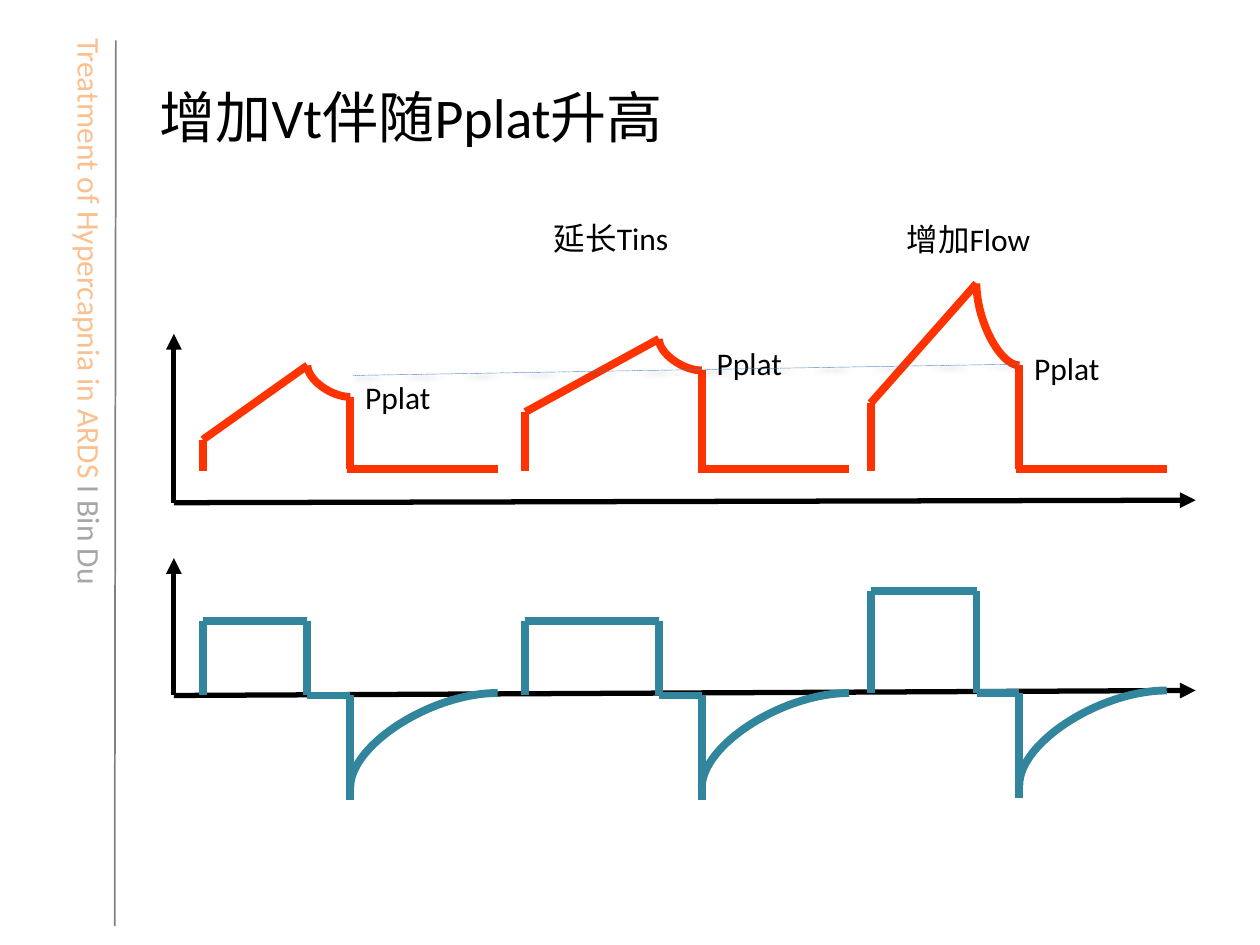
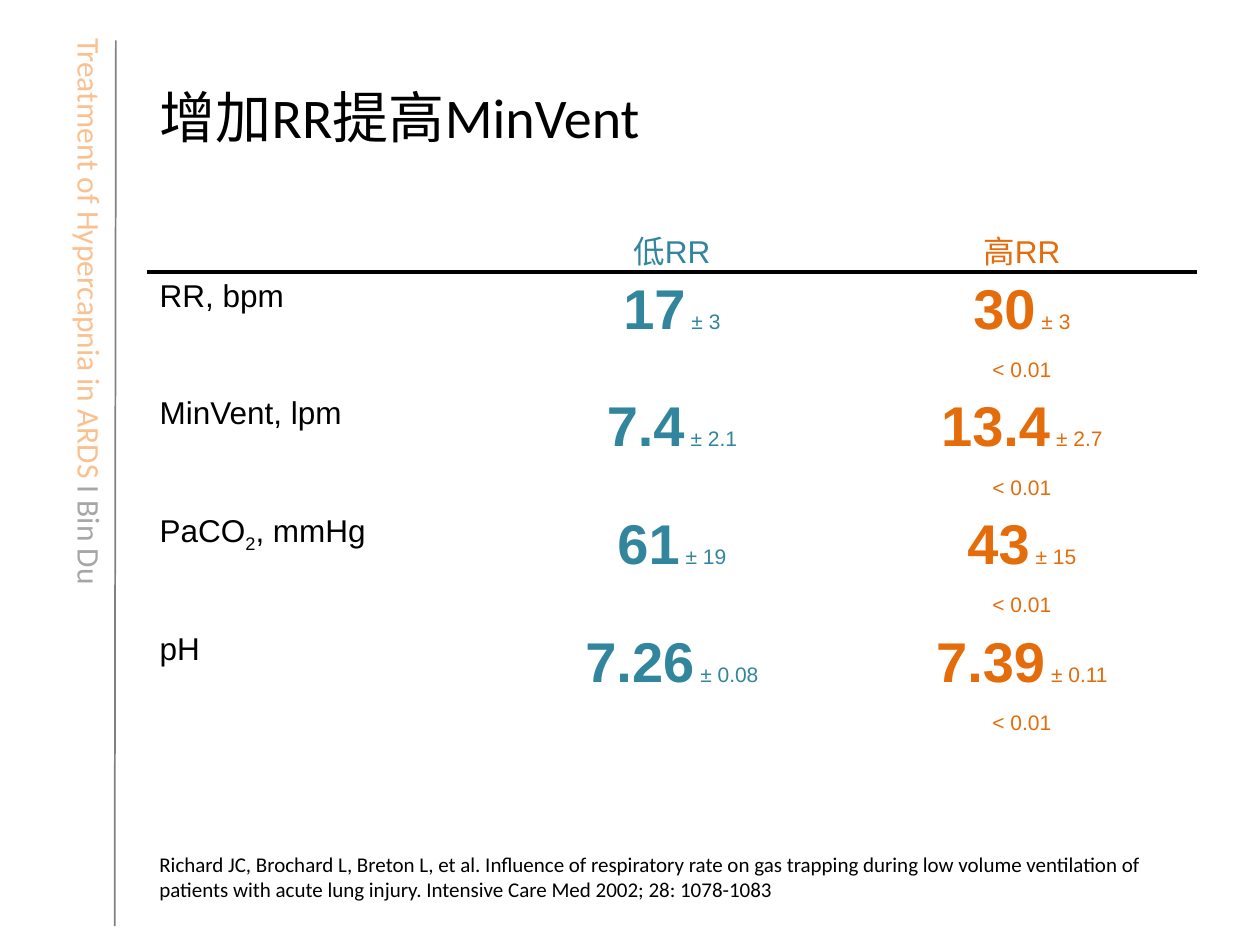
from lxml.etree import SubElement
from pptx import Presentation
from pptx.dml.color import RGBColor
from pptx.enum.dml import MSO_LINE
from pptx.enum.shapes import MSO_CONNECTOR
from pptx.enum.text import MSO_ANCHOR, MSO_AUTO_SIZE, PP_ALIGN
from pptx.oxml import parse_xml
from pptx.oxml.ns import nsdecls, qn
from pptx.util import Inches, Pt

BLACK = RGBColor(0, 0, 0)
GRAY = RGBColor(0x80, 0x80, 0x80)
PALE = RGBColor(0xA6, 0xA6, 0xA6)
PEACH = RGBColor(0xFA, 0xC0, 0x90)
RED = RGBColor(0xFF, 0x33, 0x00)
TEAL = RGBColor(0x31, 0x85, 0x9C)
ORANGE = RGBColor(0xE4, 0x6C, 0x0A)
BLUE = RGBColor(0x4F, 0x81, 0xBD)

LEFT, WIDE = 7 / 6, 25 / 3
TITLE = (LEFT, 0.3, WIDE, 1.25)
PRESS = (1.38, 2.65, 8.11, 1.34)
FLOW = (1.38, 4.43, 8.11, 1.09)
TABLE = (LEFT, 1.75, WIDE, 4.14)
SOURCE = (LEFT, 6.71, WIDE, 0.5)
WAVES = [
    dict(x=0.23, rise=0.83, start=0.5, peak=1.09, plat=0.84, base=0, top=0.59),
    dict(x=2.79, rise=1.06, start=0.72, peak=1.3, plat=1.05, base=0, top=0.59),
    dict(x=5.53, rise=0.84, start=0.79, peak=1.74, plat=1.09, base=0.02, top=0.83),
]
HOLD, TAIL, FLOOR = 0.34, 1.17, 0.27
LABELS = [
    ("延长Tins", (4.29, 1.69, 1.12, 0.4), PP_ALIGN.CENTER),
    ("增加Flow", (7.09, 1.7, 1.19, 0.4), PP_ALIGN.CENTER),
    ("Pplat", (2.8, 2.95, 0.73, 0.4), PP_ALIGN.LEFT),
    ("Pplat", (5.59, 2.68, 0.73, 0.4), PP_ALIGN.LEFT),
    ("Pplat", (8.11, 2.72, 0.73, 0.4), PP_ALIGN.LEFT),
]
ROWS = [
    ("RR, bpm", ("17", "3"), ("30", "3")),
    ("MinVent, lpm", ("7.4", "2.1"), ("13.4", "2.7")),
    ("PaCO|2|, mmHg", ("61", "19"), ("43", "15")),
    ("pH", ("7.26", "0.08"), ("7.39", "0.11")),
]
CITE = (
    "Richard JC, Brochard L, Breton L, et al. Influence of respiratory rate on gas "
    "trapping during low volume ventilation of patients with acute lung injury. "
    "Intensive Care Med 2002; 28: 1078-1083"
)


def write(frame, text, size=18, color=BLACK, font="Calibri", bold=False,
          align=PP_ALIGN.LEFT, base=0):
    para = frame.paragraphs[0]
    para.alignment = align
    run = para.add_run()
    run.text = text
    run.font.size = Pt(size)
    run.font.name = font
    run.font.bold = bold
    run.font.color.rgb = color
    if base:
        run.font._element.set("baseline", str(base * 1000))


def place(slide, box, wrap=False):
    shape = slide.shapes.add_textbox(*map(Inches, box))
    shape.text_frame.word_wrap = wrap
    shape.text_frame.auto_size = MSO_AUTO_SIZE.SHAPE_TO_FIT_TEXT
    return shape


def line(slide, start, end, color=BLACK, width=3, arrow=False):
    ends = map(Inches, (*start, *end))
    link = slide.shapes.add_connector(MSO_CONNECTOR.STRAIGHT, *ends)
    link.line.color.rgb = color
    link.line.width = Pt(width)
    if arrow:
        SubElement(link.line._get_or_add_ln(), qn("a:tailEnd"), type="triangle")
    SubElement(link._element.spPr, qn("a:effectLst"))
    return link


def path(slide, points, color):
    for start, end in zip(points, points[1:]):
        line(slide, start, end, color, 4.5)


def arc(slide, mid, wide, high, color):
    bend = 0.45
    spots = [(0, 1), (bend, 1), (1, bend), (1, 0)]
    dots = [(Inches(mid[0] - wide * across), Inches(mid[1] + high * down))
            for across, down in spots]
    pen = slide.shapes.build_freeform(*dots[0])
    pen.add_line_segments(dots[1:], close=False)
    curve = pen.convert_to_shape()
    steps = list(curve._element.iter(qn("a:lnTo")))
    track = steps[0].getparent()
    bow = SubElement(track, qn("a:cubicBezTo"))
    for step in steps:
        bow.append(step[0])
        track.remove(step)
    curve.shadow.inherit = False
    curve.fill.background()
    curve.line.color.rgb = color
    curve.line.width = Pt(4.5)


def axes(slide, box, lift):
    left, top, wide, high = box
    zero = (left, top + high)
    line(slide, zero, (left, top), arrow=True)
    line(slide, zero, (left + wide, top + high - lift), arrow=True)


def press(slide, box, wave):
    left, foot = box[0] + wave["x"], box[1] + box[3]
    crest = left + wave["rise"]
    end = crest + HOLD
    floor, start, peak, plat = (
        foot - rise for rise in (FLOOR, wave["start"], wave["peak"], wave["plat"]))
    path(slide, [(left, floor + 0.02), (left, start), (crest, peak)], RED)
    arc(slide, (end, peak), HOLD, plat - peak, RED)
    path(slide, [(end, plat), (end, floor)], RED)
    path(slide, [(end - 0.03, floor), (end + TAIL, floor)], RED)


def flow(slide, box, wave):
    left, foot = box[0] + wave["x"], box[1] + box[3]
    crest = left + wave["rise"]
    end = crest + HOLD
    base, top = foot - wave["base"], foot - wave["top"]
    path(slide, [(left, base), (left, top), (crest, top), (crest, base),
                 (end, base), (end, base + 0.83)], TEAL)
    arc(slide, (end + TAIL, base + 0.73), TAIL, -0.75, TEAL)


def guide(slide, start, end):
    link = line(slide, start, end, BLUE, 0.25)
    link.line.dash_style = MSO_LINE.SQUARE_DOT
    glow = link._element.spPr.find(qn("a:effectLst"))
    glow.append(parse_xml(
        f'<a:outerShdw {nsdecls("a")} blurRad="40000" dist="20000" dir="5400000" '
        'rotWithShape="0"><a:srgbClr val="000000"><a:alpha val="38000"/>'
        '</a:srgbClr></a:outerShdw>'))


def frame(deck, text):
    slide = deck.slides.add_slide(deck.slide_layouts[5])
    line(slide, (0.92, 0.32), (0.91, 7.35), GRAY, 1)
    side = place(slide, (-1.59, 2.31, 4.61, 0.4))
    side.rotation = 90
    write(side.text_frame, "Treatment of Hypercapnia in ARDS ", color=PEACH)
    write(side.text_frame, "Ι Bin Du", color=PALE)
    title = slide.shapes.title
    title.left, title.top, title.width, title.height = map(Inches, TITLE)
    title.text_frame.auto_size = MSO_AUTO_SIZE.NONE
    title.text_frame.vertical_anchor = MSO_ANCHOR.MIDDLE
    write(title.text_frame, text, size=32)
    return slide


def rule(cell):
    cell._tc.get_or_add_tcPr().insert(0, parse_xml(
        f'<a:lnB {nsdecls("a")} w="38100"><a:solidFill><a:srgbClr val="000000"/>'
        '</a:solidFill></a:lnB>'))


def grid(slide, box):
    highs = [0.41] + [0.41, 0.17] * len(ROWS)
    shape = slide.shapes.add_table(len(highs), 3, *map(Inches, box))
    table = shape.table
    table.first_row = table.horz_banding = False
    style = table._tbl.tblPr.find(qn("a:tableStyleId"))
    style.text = "{2D5ABB26-0587-4C30-8999-92F81FD0307C}"
    for row, high in zip(table.rows, highs):
        row.height = Inches(high)
    for cell in table.iter_cells():
        cell.fill.background()
    for col in range(3):
        rule(table.cell(0, col))

    look = dict(font="Arial", align=PP_ALIGN.CENTER)
    for col, head, color in ((1, "低RR", TEAL), (2, "高RR", ORANGE)):
        write(table.cell(0, col).text_frame, head, color=color, **look)
    for index, (name, *pairs) in enumerate(ROWS):
        row = 1 + 2 * index
        for part, text in enumerate(name.split("|")):
            write(table.cell(row, 0).text_frame, text, font="Arial",
                  base=-25 if part == 1 else 0)
        for col, (mean, dev), color in zip((1, 2), pairs, (TEAL, ORANGE)):
            body = table.cell(row, col).text_frame
            write(body, mean, size=32, color=color, bold=True, **look)
            write(body, f" ± {dev}", size=12, color=color, **look)
        write(table.cell(row + 1, 2).text_frame, "< 0.01", size=12,
              color=ORANGE, **look)
        for col in (0, 1):
            para = table.cell(row + 1, col).text_frame.paragraphs[0]
            SubElement(para._p, qn("a:endParaRPr"), sz="1200")


def curves(deck):
    slide = frame(deck, "增加Vt伴随Pplat升高")
    axes(slide, PRESS, 0.02)
    axes(slide, FLOW, 0.04)
    for wave in WAVES:
        press(slide, PRESS, wave)
        flow(slide, FLOW, wave)
    for text, box, align in LABELS:
        write(place(slide, box).text_frame, text, align=align)
    guide(slide, (8.1, 2.89), (2.8, 2.98))


def trial(deck):
    slide = frame(deck, "增加RR提高MinVent")
    grid(slide, TABLE)
    write(place(slide, SOURCE, wrap=True).text_frame, CITE, size=12)


def main():
    deck = Presentation()
    deck.slide_width, deck.slide_height = Inches(10), Inches(7.5)
    curves(deck)
    trial(deck)
    deck.save("out.pptx")


if __name__ == "__main__":
    main()
